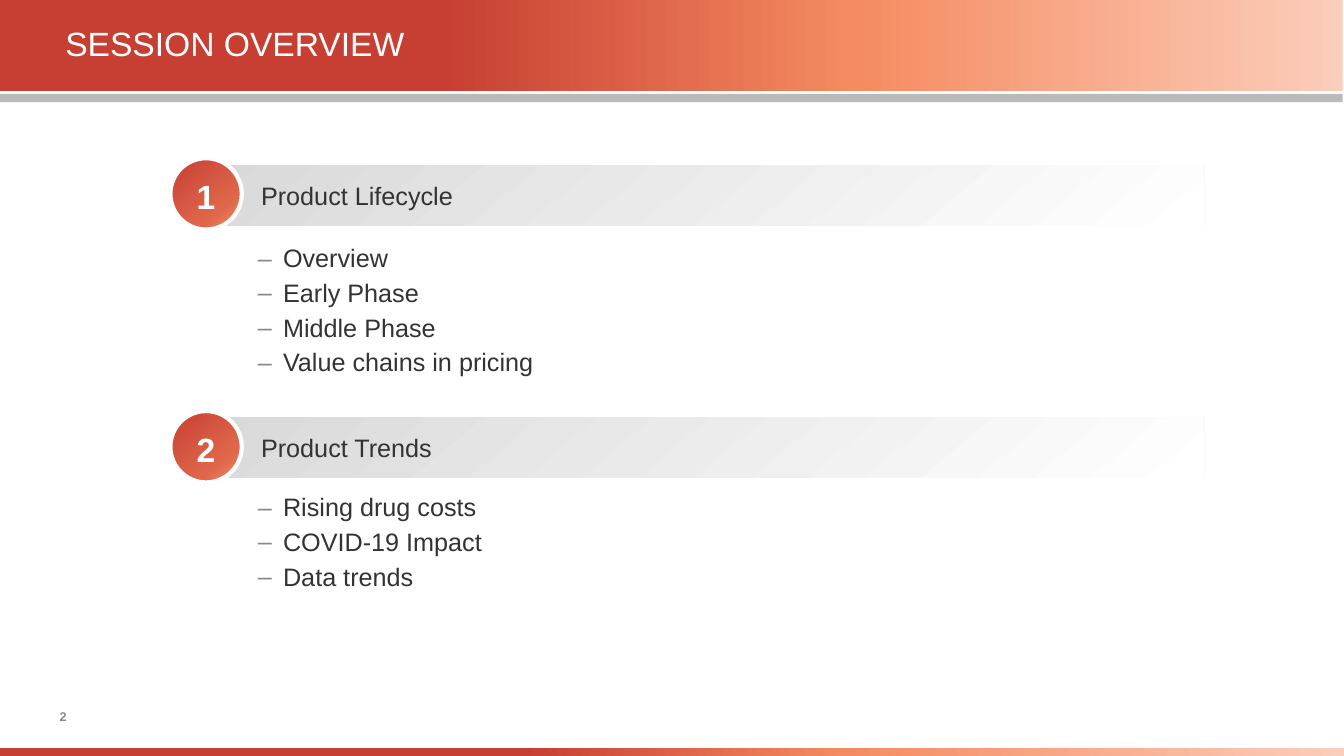
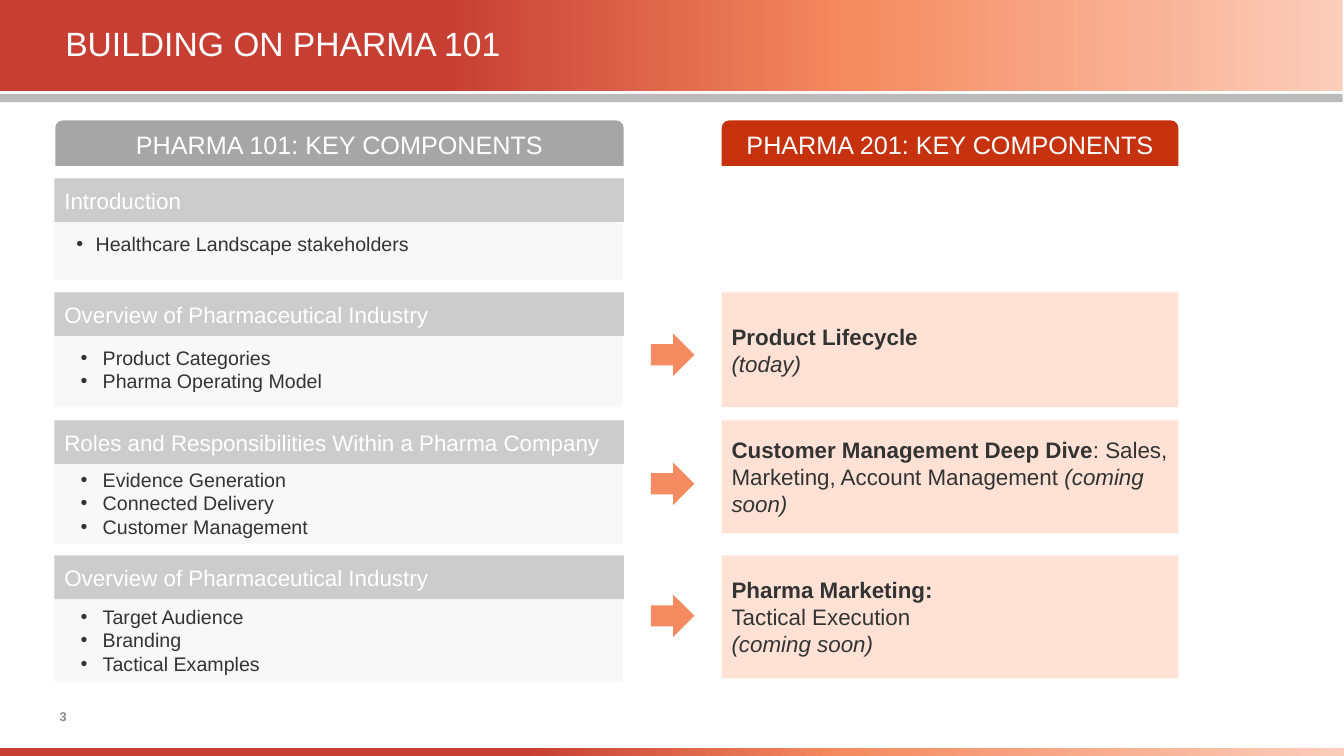
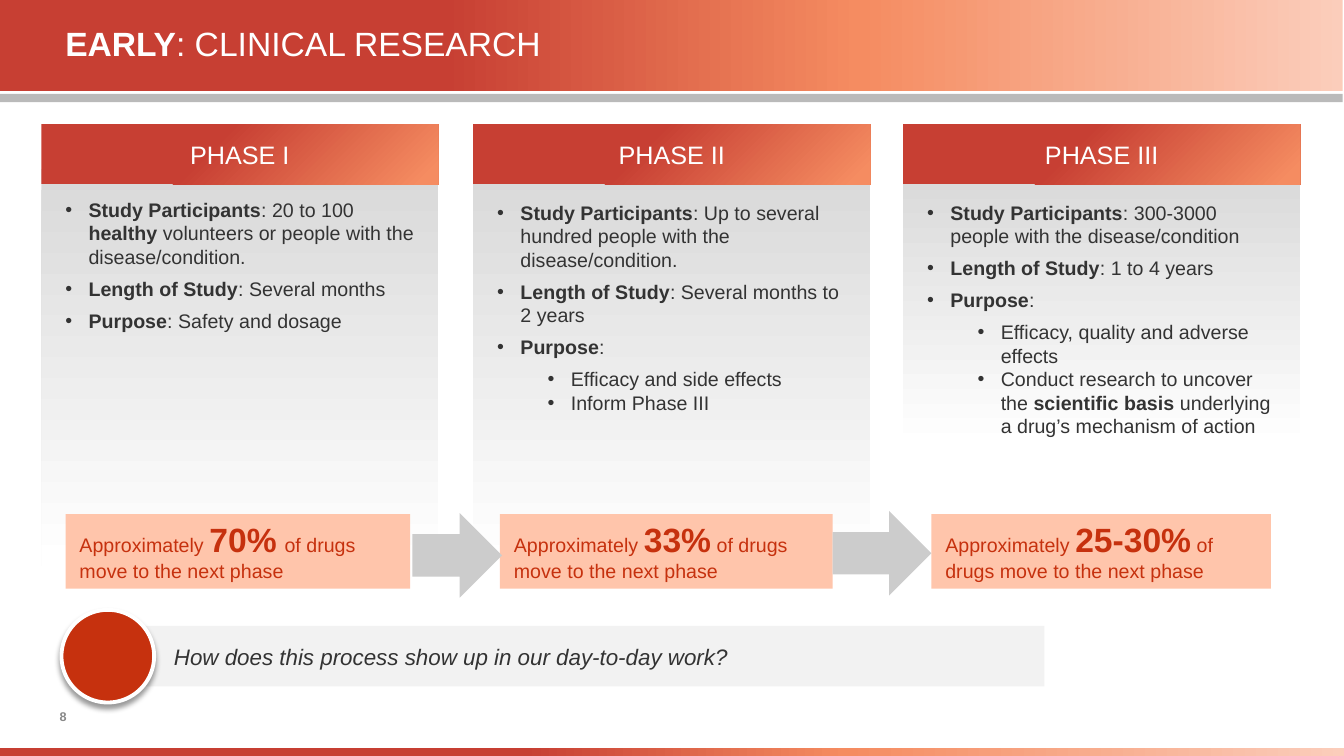
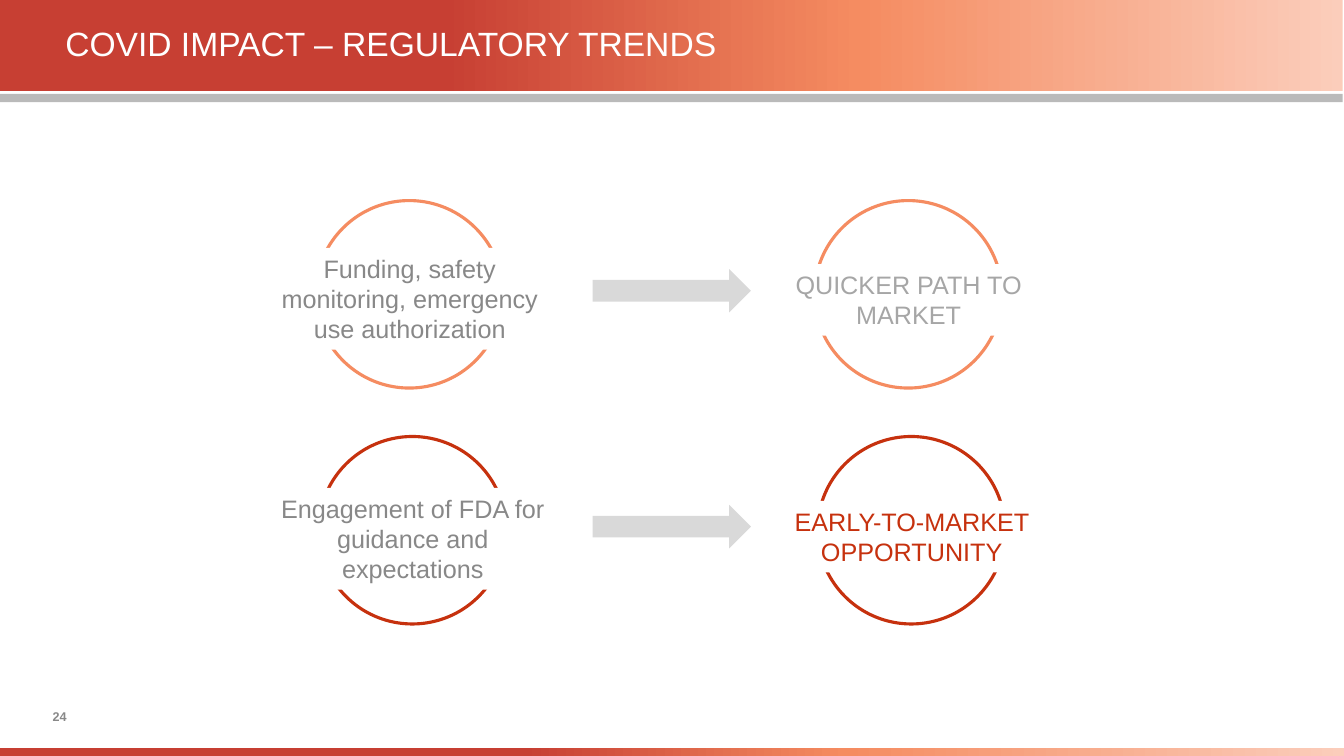
from dataclasses import dataclass

from lxml import etree
from pptx import Presentation
from pptx.dml.color import RGBColor
from pptx.enum.shapes import MSO_SHAPE as Shape
from pptx.enum.text import MSO_ANCHOR as Anchor, PP_ALIGN as Align
from pptx.oxml.ns import qn
from pptx.util import Pt

# Shared look
FONT = "Arial"
WHITE, DARK, GREY = "FFFFFF", "333333", "888888"
PALE, SILVER, MID_GREY, LIGHT = "F2F2F2", "CCCCCC", "A6A6A6", "D9D9D9"
RED, BRICK, ORANGE = "C6310E", "C73F33", "F58C61"
HEADER_STOPS = [(0, "FBCDBB"), (36, ORANGE), (67, BRICK), (100, BRICK)]
FOOTER_STOPS = [(0, "FBCDBB"), (37, ORANGE), (61, BRICK), (100, BRICK)]
BADGE_STOPS = [(0, BRICK), (70, "DE664A"), (100, ORANGE)]
PHASE_STOPS = [(4, ORANGE), (58, BRICK), (100, BRICK)]
FADE_STOPS = [(0, LIGHT), (100, WHITE)]
INSET = (7.2, 3.6, 7.2, 3.6)


@dataclass
class Para:
    """A paragraph; each run is (text, style letters, optional size)."""
    runs: list
    left: float = 0
    hang: float = 0
    bullet: str = ""
    bullet_color: str = ""
    before: float = 0
    after: float = 0
    line: float = 0


# Content
OVERVIEW = [  # heading, top of the list, list items
    ("Product Lifecycle", 171.4,
     ["Overview", "Early Phase", "Middle Phase", "Value chains in pricing"]),
    ("Product Trends", 349.2,
     ["Rising drug costs", "COVID-19 Impact", "Data trends"]),
]

COMPONENT_HEADS = [
    ("PHARMA 101: KEY COMPONENTS", 39.5, 406, MID_GREY),
    ("PHARMA 201: KEY COMPONENTS", 515.5, 326.2, RED),
]
COMPONENTS = [  # heading, tops of head, body and list, items, indent, card
    ("Introduction", 127.4, 139.7, 162,
     ["Healthcare Landscape stakeholders"], (22.3, -13.7), None),
    ("Overview of Pharmaceutical Industry", 208.8, 230.4, 243.4,
     ["Product Categories", "Pharma Operating Model"], (27.4, -15.8),
     (82, 238.3, [[("Product Lifecycle", "b")], [("(today)", "i")]])),
    ("Roles and Responsibilities Within a Pharma Company", 300.2, 328.3, 330.5,
     ["Evidence Generation", "Connected Delivery", "Customer Management"],
     (27.4, -15.8),
     (80.6, 330.5, [[("Customer Management Deep Dive", "b"),
                     (": Sales, Marketing, Account Management ", ""),
                     ("(coming soon)", "i")]])),
    ("Overview of Pharmaceutical Industry", 396.7, 427, 428.4,
     ["Target Audience", "Branding", "Tactical Examples"], (27.4, -15.8),
     (87.8, 424.8, [[("Pharma Marketing:", "b")], [("Tactical Execution", "")],
                    [("(coming soon)", "i")]])),
]

PHASES = [
    dict(name="PHASE I", x=29.5, height=283, inset=(14.4, 20.2, 14.4, 0),
         facts=[[("Study Participants", "b"), (": 20 to 100 ", ""), ("healthy", "b"),
                 (" volunteers or people with the disease/condition.", "")],
                [("Length of Study", "b"), (": Several months", "")],
                [("Purpose", "b"), (": Safety and dosage", "")]],
         details=[], callout=(46.8, 246.2),
         rate=[("70%", "b", 24), (" ", "", 20), ("of drugs move to the next phase", "")]),
    dict(name="PHASE II", x=338, height=283, inset=(14.4, 22.3, 20.2, 0),
         facts=[[("Study Participants", "b"),
                 (": Up to several hundred people with the disease/condition.", "")],
                [("Length of Study", "b"), (": Several months to 2 years", "")],
                [("Purpose", "b"), (":", "")]],
         details=[[("Efficacy and side effects", "")], [("Inform Phase III", "")]],
         callout=(357.1, 237.6),
         rate=[("33%", "b", 24), (" of drugs move to the next phase", "")]),
    dict(name="PHASE III", x=645.1, height=198.7, inset=(14.4, 22.3, 20.2, 0),
         facts=[[("Study Participants", "b"),
                 (": 300-3000 people with the disease/condition", "")],
                [("Length of Study", "b"), (": 1 to 4 years", "")],
                [("Purpose", "b"), (":", "")]],
         details=[[("Efficacy, quality and adverse effects", "")],
                  [("Conduct research to uncover the ", ""), ("scientific basis ", "b"),
                   ("underlying a drug’s mechanism of action", "")]],
         callout=(665.3, 242.6),
         rate=[("25-30%", "b", 24), (" of drugs move to the next phase", "")]),
]
PHASE_ARROWS = [(294.5, 366.5, 64.1), (594.7, 365, 70.6)]

TRENDS = [  # top, x shift, ring colour, cause, effect, effect colour
    (143.3, 0, ORANGE, ("Funding, safety monitoring, emergency use authorization", 177.1),
     ("QUICKER PATH TO MARKET", 188.6), MID_GREY),
    (311.8, 2.2, RED, ("Engagement of FDA for guidance and expectations", 348.5),
     ("EARLY-TO-MARKET OPPORTUNITY", 357.8), RED),
]


# Helpers
def rgb(value):
    return RGBColor.from_string(value)


def sub(parent, tag, **attrs):
    node = etree.SubElement(parent, qn(tag))
    for key, value in attrs.items():
        node.set(key, str(value))
    return node


def add_gradient(sp, stops, angle=None):
    """Linear at the given angle, or circular from the lower right corner."""
    sp.fill.gradient()
    grad = sp._element.spPr.find(qn("a:gradFill"))
    for child in list(grad):
        grad.remove(child)
    stop_list = sub(grad, "a:gsLst")
    for pos, color in stops:
        sub(sub(stop_list, "a:gs", pos=pos * 1000), "a:srgbClr", val=color)
    if angle is None:
        sub(sub(grad, "a:path", path="circle"), "a:fillToRect", l=100000, t=100000)
    else:
        sub(grad, "a:lin", ang=angle * 60000, scaled=0)


def add_shape(slide, kind, x, y, w, h, fill=None, line=None, angle=None):
    sp = slide.shapes.add_shape(kind, Pt(x), Pt(y), Pt(w), Pt(h))
    sp.shadow.inherit = False
    if isinstance(fill, list):
        add_gradient(sp, fill, angle)
    else:
        sp.fill.solid()
        sp.fill.fore_color.rgb = rgb(fill)
    if line:
        sp.line.color.rgb, sp.line.width = rgb(line[0]), Pt(line[1])
    else:
        sp.line.fill.background()
    return sp


def write(sp, paras, size, color, align=Align.LEFT, anchor=Anchor.MIDDLE, inset=INSET):
    tf = sp.text_frame
    tf.word_wrap, tf.vertical_anchor = True, anchor
    tf.margin_left, tf.margin_top, tf.margin_right, tf.margin_bottom = map(Pt, inset)
    for i, para in enumerate(paras):
        p = tf.paragraphs[0] if i == 0 else tf.add_paragraph()
        p.alignment = align
        if para.line:
            p.line_spacing = para.line
        if para.before and i:
            p.space_before = Pt(para.before)
        if para.after:
            p.space_after = Pt(para.after)
        props = p._p.get_or_add_pPr()
        if para.left:
            props.set("marL", str(Pt(para.left)))
            props.set("indent", str(Pt(para.hang)))
        if para.bullet:
            if para.bullet_color:
                sub(sub(props, "a:buClr"), "a:srgbClr", val=para.bullet_color)
            sub(props, "a:buFont", typeface=FONT)
            sub(props, "a:buChar", char=para.bullet)
        for text, style, *own_size in para.runs:
            r = p.add_run()
            r.text = text
            r.font.name, r.font.color.rgb = FONT, rgb(color)
            r.font.size = Pt(own_size[0] if own_size else size)
            r.font.bold, r.font.italic = "b" in style, "i" in style


def add_text(slide, x, y, w, h, paras, size, color, **options):
    write(slide.shapes.add_textbox(Pt(x), Pt(y), Pt(w), Pt(h)), paras, size, color, **options)


def plain(text, style=""):
    return [Para([(text, style)])]


def new_slide(prs, number, title):
    slide = prs.slides.add_slide(prs.slide_layouts[6])
    add_shape(slide, Shape.RECTANGLE, 0, 0, 959, 65, HEADER_STOPS, angle=180)
    add_shape(slide, Shape.RECTANGLE, 0, 534, 960, 6, FOOTER_STOPS, angle=180)
    add_shape(slide, Shape.RECTANGLE, 0, 67, 959, 6, "BABABA")
    add_text(slide, 0, 497.5, 54.7, 28.8, plain(number, "b"), 9, GREY, align=Align.RIGHT)
    add_text(slide, 39.6, -1.4, 911.5, 68.4, [Para(title, line=0.9)], 24, WHITE)
    return slide


# Slides
def build_overview(prs):
    slide = new_slide(prs, "2", [("SESSION OVERVIEW", "")])
    for i, (heading, list_top, items) in enumerate(OVERVIEW):
        bar = add_shape(slide, Shape.RECTANGLE, 143.3, 118 + 180 * i, 717, 43,
                        FADE_STOPS, angle=50)
        write(bar, plain(heading), 18, DARK, inset=(43.2, 0, 0, 0))
        badge = add_shape(slide, Shape.OVAL, 121.7, 113 + 180.6 * i, 51, 51,
                          BADGE_STOPS, (WHITE, 3), angle=50)
        write(badge, plain(str(i + 1), "b"), 24, WHITE, Align.CENTER,
              inset=(7.2, 3.6, 7.2, 0))
        paras = [Para([(item, "")], 40.3, -18, "–", GREY, before=4.2, line=0.95)
                 for item in items]
        add_text(slide, 154.8, list_top, 324.7, 92.2, paras, 18, DARK, anchor=Anchor.TOP)


def build_components(prs):
    slide = new_slide(prs, "3", [("BUILDING ON PHARMA 101", "")])
    for text, x, w, color in COMPONENT_HEADS:
        sp = add_shape(slide, Shape.ROUND_2_SAME_RECTANGLE, x, 86, w, 32.4, color)
        write(sp, plain(text), 18, WHITE, Align.CENTER)
    for heading, top, body_top, list_top, items, indent, card in COMPONENTS:
        body = add_shape(slide, Shape.RECTANGLE, 38.9, body_top, 406, 60.5, PALE)
        sub(body._element.spPr.find(".//" + qn("a:srgbClr")), "a:alpha", val=53000)
        head = add_shape(slide, Shape.RECTANGLE, 38.9, top, 406.8, 31.2, SILVER)
        write(head, plain(heading), 16, WHITE)
        add_text(slide, 38.9, list_top, 406, 5 + 17 * len(items),
                 [Para([(item, "")], *indent, "•") for item in items], 14, DARK,
                 anchor=Anchor.TOP)
        if card:
            height, arrow_top, lines = card
            sp = add_shape(slide, Shape.RECTANGLE, 515.5, top, 326.2, height, "FFE2D5")
            write(sp, [Para(runs) for runs in lines], 16, DARK)
            add_shape(slide, Shape.RIGHT_ARROW, 465, arrow_top, 31, 30.2, ORANGE)


def build_phases(prs):
    slide = new_slide(prs, "8", [("EARLY", "b"), (": CLINICAL RESEARCH", "")])
    # Phase columns with their success rates
    for phase in PHASES:
        body = add_shape(slide, Shape.RECTANGLE, phase["x"], 121, 283.7, phase["height"],
                         FADE_STOPS, angle=90)
        paras = [Para(runs, 19.4, -16.6, "•", after=6) for runs in phase["facts"]]
        paras += [Para(runs, 55.4, -16.6, "•") for runs in phase["details"]]
        write(body, paras, 14, DARK, anchor=Anchor.TOP, inset=phase["inset"])
        head = add_shape(slide, Shape.RECTANGLE, phase["x"], 88.6, 283.7, 43.2, PHASE_STOPS)
        write(head, plain(phase["name"]), 18, WHITE, Align.CENTER)
        x, w = phase["callout"]
        callout = add_shape(slide, Shape.RECTANGLE, x, 367.2, w, 53.3, "FFC5AB")
        write(callout, [Para([("Approximately ", "")] + phase["rate"], 2.9)], 14, RED,
              anchor=Anchor.TOP)
    for x, y, w in PHASE_ARROWS:
        add_shape(slide, Shape.RIGHT_ARROW, x, y, w, 60.5, SILVER)
    # Discussion question
    bar = add_shape(slide, Shape.RECTANGLE, 67, 447.1, 679, 43.2, PALE)
    write(bar, plain("How does this process show up in our day-to-day work?", "i"), 16, DARK,
          inset=(57.3, 3.6, 7.2, 3.6))
    disc = add_shape(slide, Shape.OVAL, 43.9, 435.6, 66.2, 66.2, RED, (WHITE, 2.75))
    effects = disc._element.spPr.find(qn("a:effectLst"))
    shadow = sub(effects, "a:outerShdw", blurRad=Pt(4), dist=Pt(3), dir=5400000, rotWithShape=0)
    sub(sub(shadow, "a:srgbClr", val="000000"), "a:alpha", val=40000)


def build_trends(prs):
    slide = new_slide(prs, "24", [("COVID IMPACT – REGULATORY TRENDS", "")])
    for top, shift, ring, cause, effect, effect_color in TRENDS:
        sides = [(225.4, cause, 72.7, GREY), (581.8, effect, 51.1, effect_color)]
        for x, (text, text_top), height, color in sides:
            add_shape(slide, Shape.OVAL, x + shift, top, 133.9, 133.9, WHITE, (ring, 2.25))
            label = add_shape(slide, Shape.RECTANGLE, x + shift - 41.1, text_top,
                              216.7, height, WHITE)
            write(label, plain(text), 18, color, Align.CENTER, Anchor.TOP)
        add_shape(slide, Shape.RIGHT_ARROW, 423.4, top + 48.9, 113, 31, LIGHT)


def main():
    prs = Presentation()
    prs.slide_width, prs.slide_height = Pt(960), Pt(540)
    for build in (build_overview, build_components, build_phases, build_trends):
        build(prs)
    prs.save("out.pptx")


if __name__ == "__main__":
    main()
